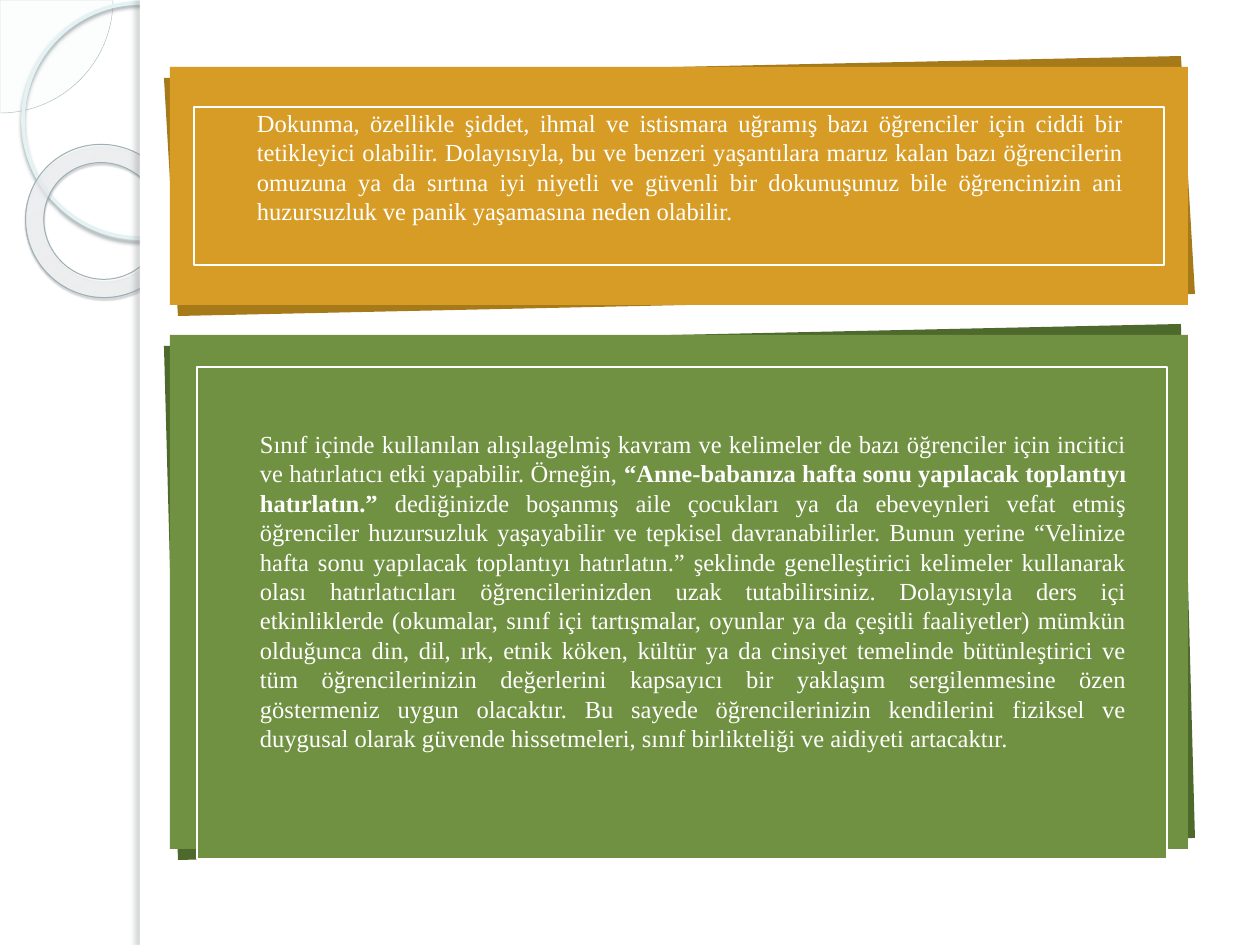
from lxml.etree import SubElement
from pptx import Presentation
from pptx.dml.color import RGBColor
from pptx.enum.shapes import MSO_SHAPE as Shape
from pptx.enum.text import MSO_ANCHOR as Anchor, PP_ALIGN as Align
from pptx.oxml import parse_xml
from pptx.oxml.ns import nsdecls, qn
from pptx.util import Pt

PX = 914400 / 126
WHITE = "FFFFFF"
TOUCH_TEXT = [
    ("Dokunma, özellikle şiddet, ihmal ve istismara uğramış bazı öğrenciler için ciddi bir "
     "tetikleyici olabilir. Dolayısıyla, bu ve benzeri yaşantılara maruz kalan bazı öğrencilerin "
     "omuzuna ya da sırtına iyi niyetli ve güvenli bir dokunuşunuz bile öğrencinizin ani "
     "huzursuzluk ve panik yaşamasına neden olabilir.", False),
]
WORDS_TEXT = [
    ("Sınıf içinde kullanılan alışılagelmiş kavram ve kelimeler de bazı öğrenciler için incitici "
     "ve hatırlatıcı etki yapabilir. Örneğin, ", False),
    ("“Anne-babanıza hafta sonu yapılacak toplantıyı hatırlatın.” ", True),
    ("dediğinizde boşanmış aile çocukları ya da ebeveynleri vefat etmiş öğrenciler huzursuzluk "
     "yaşayabilir ve tepkisel davranabilirler. Bunun yerine “Velinize hafta sonu yapılacak "
     "toplantıyı hatırlatın.” şeklinde genelleştirici kelimeler kullanarak olası hatırlatıcıları "
     "öğrencilerinizden uzak tutabilirsiniz. Dolayısıyla ders içi etkinliklerde (okumalar, sınıf "
     "içi tartışmalar, oyunlar ya da çeşitli faaliyetler) mümkün olduğunca din, dil, ırk, etnik "
     "köken, kültür ya da cinsiyet temelinde bütünleştirici ve tüm öğrencilerinizin değerlerini "
     "kapsayıcı bir yaklaşım sergilenmesine özen göstermeniz uygun olacaktır. Bu sayede "
     "öğrencilerinizin kendilerini fiziksel ve duygusal olarak güvende hissetmeleri, sınıf "
     "birlikteliği ve aidiyeti artacaktır.", False),
]


def px(length):
    """Turn pixels into EMU."""
    return round(length * PX)


def color(hex_code):
    """Turn a hex string into a colour."""
    return RGBColor.from_string(hex_code)


def set_alpha(color_element, percent):
    """Set the opacity of a colour element."""
    SubElement(color_element, qn("a:alpha")).set("val", str(percent * 1000))


def paint(shape, fill=None, line=None, width=1):
    """Give a shape its fill and line, and remove the theme shadow."""
    shape.shadow.inherit = False
    if fill:
        shape.fill.solid()
        shape.fill.fore_color.rgb = color(fill)
    else:
        shape.fill.background()
    if line:
        shape.line.color.rgb = color(line)
        shape.line.width = Pt(width)
    else:
        shape.line.fill.background()
    return shape


def add_preset(slide, kind, box, **style):
    """Add a painted preset shape in a pixel box."""
    return paint(slide.shapes.add_shape(kind, *map(px, box)), **style)


def add_shadow(shape, hex_code, opacity, blur, distance, angle):
    """Give a shape an outer shadow."""
    effects = shape._element.spPr.find(qn("a:effectLst"))
    shadow = SubElement(effects, qn("a:outerShdw"))
    values = {"blurRad": Pt(blur), "dist": Pt(distance), "dir": angle * 60000}
    for name, value in values.items():
        shadow.set(name, str(int(value)))
    shadow.set("algn", "tl")
    shadow.set("rotWithShape", "0")
    shade = SubElement(shadow, qn("a:srgbClr"))
    shade.set("val", hex_code)
    set_alpha(shade, opacity)


def set_radial_fill(shape, stops, focus):
    """Replace a solid fill with a circular gradient."""
    stop_xml = "".join(
        f'<a:gs pos="{position * 1000}"><a:srgbClr val="{hex_code}">'
        f'<a:alpha val="{opacity * 1000}"/></a:srgbClr></a:gs>'
        for position, hex_code, opacity in stops)
    sides = " ".join(f'{side}="{value * 1000}"' for side, value in zip("ltrb", focus))
    gradient = parse_xml(
        f'<a:gradFill {nsdecls("a")} rotWithShape="1"><a:gsLst>{stop_xml}</a:gsLst>'
        f'<a:path path="circle"><a:fillToRect {sides}/></a:path></a:gradFill>')
    properties = shape._element.spPr
    properties.replace(properties.find(qn("a:solidFill")), gradient)


def write_text(shape, runs, size=14, font="Times New Roman", hex_code=WHITE, insets=(0, 0, 0, 0)):
    """Write justified runs of (text, bold) into a shape."""
    frame = shape.text_frame
    frame.word_wrap = True
    frame.vertical_anchor = Anchor.TOP
    (frame.margin_left, frame.margin_top,
     frame.margin_right, frame.margin_bottom) = map(px, insets)
    paragraph = frame.paragraphs[0]
    paragraph.alignment = Align.JUSTIFY
    for text, bold in runs:
        run = paragraph.add_run()
        run.text = text
        run.font.size = Pt(size)
        run.font.name = font
        run.font.bold = bold
        run.font.color.rgb = color(hex_code)


def add_side_band(slide, box):
    """Draw the ringed band on the left and the white page beside it."""
    left, top, width, height = box
    edge = left + width
    pie = add_preset(slide, Shape.PIE, (left - 113, top - 113, 226, 226),
                     fill="F6F9FA", line="AABCBF", width=0.25)
    pie.adjustments[0], pie.adjustments[1] = 0, 54.02
    set_alpha(pie._element.spPr.find(qn("a:solidFill"))[0], 33)

    circle = add_preset(slide, Shape.OVAL, (left + 23, top + 3, 235, 235),
                        line="E5F2F4", width=2.15)
    add_shadow(circle, "95A1A3", 85, 2, 2, 90)

    ring = add_preset(slide, Shape.DONUT, (left + 25, top + 145, 155, 152),
                      fill="F8FBFC", line="9EB0B4", width=0.58)
    ring.adjustments[0] = 0.12
    ring.rotation = 38.6
    set_radial_fill(ring, [(0, "F8FBFC", 70), (70, "FCFDFE", 55), (100, "A7C7CE", 60)],
                    (-408, -50, 508, 150))
    add_shadow(ring, "495052", 35, 1, 1.2, 75)

    add_preset(slide, Shape.RECTANGLE, (edge, top, 1260 - edge, height), fill=WHITE)
    strip = add_preset(slide, Shape.RECTANGLE, (edge, top, 10, height), fill=WHITE)
    add_shadow(strip, "666B6C", 25, 3, 3, 180)


def add_panel(slide, box, fill, back, frame, runs, text_top):
    """Draw a panel over a tilted back sheet, with a framed text placed inside it."""
    left, top, width, height = box
    right, bottom = left + width, top + height
    builder = slide.shapes.build_freeform(right - 7, top - 11, scale=PX)
    builder.add_line_segments([(left - 6, top + 11), (left + 8, bottom + 11),
                               (right + 7, bottom - 11)], close=True)
    paint(builder.convert_to_shape(), fill=back)
    add_preset(slide, Shape.RECTANGLE, box, fill=fill)
    inset_x, inset_y, frame_width, frame_height = frame
    framed = add_preset(slide, Shape.RECTANGLE,
                        (left + inset_x, top + inset_y, frame_width, frame_height),
                        fill=fill, line=WHITE, width=1.04)
    write_text(framed, runs, insets=(63, text_top, 40, 0))


def main():
    """Build the slide and save it."""
    presentation = Presentation()
    presentation.slide_width, presentation.slide_height = px(1260), px(945)
    slide = presentation.slides.add_slide(presentation.slide_layouts[6])
    add_side_band(slide, (0, 0, 140, 945))
    add_panel(slide, (170, 335, 1018, 514), "719142", "4E692C",
              (27, 32, 970, 492), WORDS_TEXT, 62)
    add_panel(slide, (170, 67, 1018, 238), "D79C25", "A67919",
              (24, 40, 970, 158), TOUCH_TEXT, 1)
    presentation.save("out.pptx")


if __name__ == "__main__":
    main()
